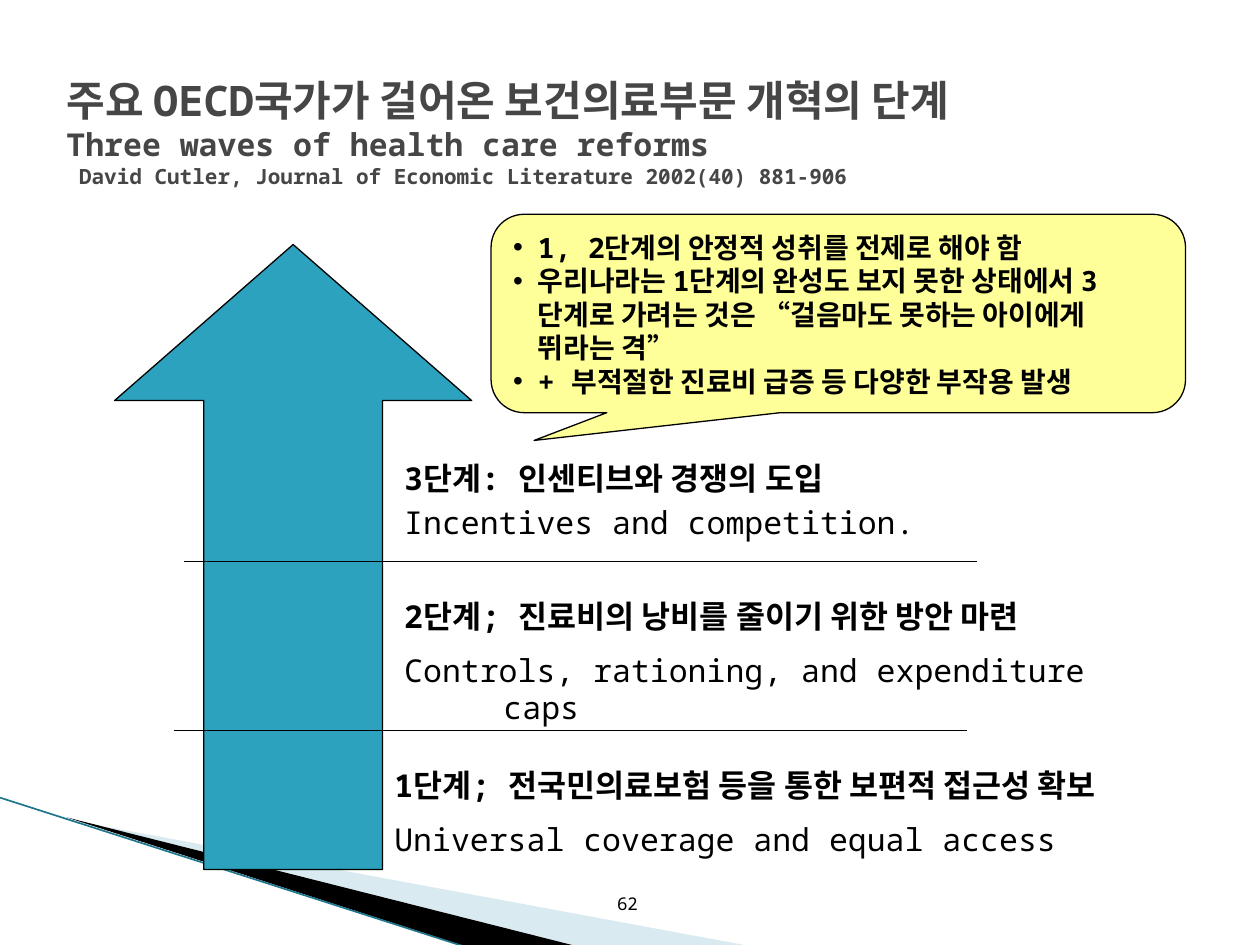
"""Build a slide on the three waves of health care reform."""
import lxml.etree
import pptx
import pptx.dml.color
import pptx.enum.shapes
import pptx.enum.text
import pptx.oxml.ns
import pptx.util

Cm = pptx.util.Cm
Pt = pptx.util.Pt
RGBColor = pptx.dml.color.RGBColor
Shapes = pptx.enum.shapes.MSO_SHAPE
Anchor = pptx.enum.text.MSO_ANCHOR
Align = pptx.enum.text.PP_ALIGN
qn = pptx.oxml.ns.qn

BLACK = RGBColor(0x00, 0x00, 0x00)
GREY = RGBColor(0x46, 0x46, 0x46)
TEAL = RGBColor(0x2D, 0xA2, 0xBF)
PALE_TEAL = RGBColor(0xA0, 0xCB, 0xDC)
DARK_TEAL = RGBColor(0x1E, 0x76, 0x8C)
YELLOW = RGBColor(0xFF, 0xFF, 0x99)
FONT = "Noto Sans Mono"
QUOTE_FONT = "Arial"

TITLE = (
    ("주요 OECD국가가 걸어온 보건의료부문 개혁의 단계", 24),
    ("Three waves of health care reforms", 18),
    (" David Cutler, Journal of Economic Literature 2002(40) 881-906", 12),
)
STAGES = (
    ((7.7, 15.32, 16, 2.16), "1단계; 전국민의료보험 등을 통한 보편적 접근성 확보",
     "Universal coverage and equal access", 9),
    ((7.9, 11.91, 15.8, 2.16), "2단계; 진료비의 낭비를 줄이기 위한 방안 마련",
     "Controls, rationing, and expenditure caps", 9),
    ((7.9, 9.12, 15.8, 1.93), "3단계: 인센티브와 경쟁의 도입",
     "Incentives and competition.", 3.6),
)
WARNINGS = (
    ("1, 2단계의 안정적 성취를 전제로 해야 함",),
    ("우리나라는 1단계의 완성도 보지 못한 상태에서 3단계로 가려는 것은 ",
     "“", "걸음마도 못하는 아이에게 뛰라는 격", "”"),
    ("+ 부적절한 진료비 급증 등 다양한 부작용 발생",),
)


def format_span(span, size, bold=False, color=BLACK, name=FONT):
    """Set the size, weight, colour and typeface of one run."""
    span.font.size = Pt(size)
    span.font.bold = bold
    span.font.color.rgb = color
    span.font.name = name


def set_hanging_indent(para, indent):
    """Give a paragraph a hanging indent in centimetres."""
    properties = para._p.get_or_add_pPr()
    properties.set("marL", str(Cm(indent)))
    properties.set("indent", str(-Cm(indent)))
    return properties


def add_box(page, area, anchor=Anchor.TOP):
    """Add a wrapping text box and return its text frame."""
    frame = page.shapes.add_textbox(*map(Cm, area)).text_frame
    frame.word_wrap = True
    frame.vertical_anchor = anchor
    return frame


def add_wedge(page, points, color, opacity=None):
    """Add a filled corner wedge without an outline."""
    corners = [(Cm(x), Cm(y)) for x, y in points]
    builder = page.shapes.build_freeform(*corners[0])
    builder.add_line_segments(corners[1:])
    wedge = builder.convert_to_shape()
    wedge.shadow.inherit = False
    wedge.fill.solid()
    wedge.fill.fore_color.rgb = color
    wedge.line.fill.background()
    if opacity:
        tint = wedge._element.spPr.find(qn("a:solidFill"))[0]
        lxml.etree.SubElement(tint, qn("a:alpha")).set("val", str(opacity * 1000))


def add_line(page, start, end, color=BLACK, width=0.75):
    """Add a straight line without a shadow."""
    line = page.shapes.add_connector(
        pptx.enum.shapes.MSO_CONNECTOR.STRAIGHT, *map(Cm, start + end))
    line.line.color.rgb = color
    line.line.width = Pt(width)
    lxml.etree.SubElement(line._element.spPr, qn("a:effectLst"))


def add_outlined_shape(page, kind, area, adjustments, color):
    """Add a filled preset shape with a thin black outline."""
    shape = page.shapes.add_shape(kind, *map(Cm, area))
    shape.shadow.inherit = False
    for index, value in enumerate(adjustments):
        shape.adjustments[index] = value
    shape.fill.solid()
    shape.fill.fore_color.rgb = color
    shape.line.color.rgb = BLACK
    shape.line.width = Pt(0.75)
    return shape


def add_title(page):
    """Add the three-line heading as one paragraph."""
    frame = add_box(page, (1.09, 0.71, 23.5, 3.89), Anchor.MIDDLE)
    para = frame.paragraphs[0]
    para.text = "\v".join(text for text, size in TITLE)
    for span, (text, size) in zip(para.runs, TITLE):
        format_span(span, size, True, GREY)


def add_stage(page, area, heading, detail, gap):
    """Add a bold stage heading with its English name below."""
    frame = add_box(page, area)
    frame.auto_size = pptx.enum.text.MSO_AUTO_SIZE.SHAPE_TO_FIT_TEXT
    frame.text = heading + "\n" + detail
    for para, bold in zip(frame.paragraphs, (True, False)):
        set_hanging_indent(para, 2)
        format_span(para.runs[0], 18, bold)
    frame.paragraphs[1].space_before = Pt(gap)


def add_warning_callout(page):
    """Add the yellow callout with its bulleted warnings."""
    callout = add_outlined_shape(
        page, Shapes.ROUNDED_RECTANGULAR_CALLOUT, (9.9, 4.32, 14, 4),
        (-0.438, 0.64, 0.167), YELLOW)
    frame = callout.text_frame
    frame.word_wrap = True
    frame.vertical_anchor = Anchor.TOP
    frame.text = "\n".join("" for warning in WARNINGS)
    for para, warning in zip(frame.paragraphs, WARNINGS):
        para.alignment = Align.LEFT
        properties = set_hanging_indent(para, 0.5)
        lxml.etree.SubElement(properties, qn("a:buFont")).set("typeface", QUOTE_FONT)
        lxml.etree.SubElement(properties, qn("a:buChar")).set("char", "•")
        for text in warning:
            span = para.add_run()
            span.text = text
            format_span(span, 16, True, name=QUOTE_FONT if text in "“”" else FONT)


def add_page_number(page):
    """Add the page number at the foot of the slide."""
    frame = add_box(page, (12.09, 17.53, 1.02, 1.02), Anchor.BOTTOM)
    frame.text = "62"
    frame.paragraphs[0].alignment = Align.RIGHT
    format_span(frame.paragraphs[0].runs[0], 10)


def main():
    """Build and save the deck."""
    deck = pptx.Presentation()
    deck.slide_width, deck.slide_height = Cm(25.4), Cm(19.05)
    page = deck.slides.add_slide(deck.slide_layouts[6])
    add_wedge(page, ((1.4, 16.53), (15.11, 19.07), (11.58, 19.07)), PALE_TEAL, 40)
    add_wedge(page, ((1.35, 16.48), (11.61, 19.07), (9.45, 19.1)), BLACK)
    add_line(page, (0, 16.08), (9.42, 19.1), DARK_TEAL, 0.95)
    add_page_number(page)
    add_title(page)
    add_outlined_shape(page, Shapes.UP_ARROW, (2.31, 4.93, 7.2, 12.6), (0.5, 0.437), TEAL)
    for left, top in ((3.7, 11.32), (3.5, 14.73)):
        add_line(page, (left, top), (left + 16, top))
    for stage in STAGES:
        add_stage(page, *stage)
    add_warning_callout(page)
    deck.save("out.pptx")


if __name__ == "__main__":
    main()
